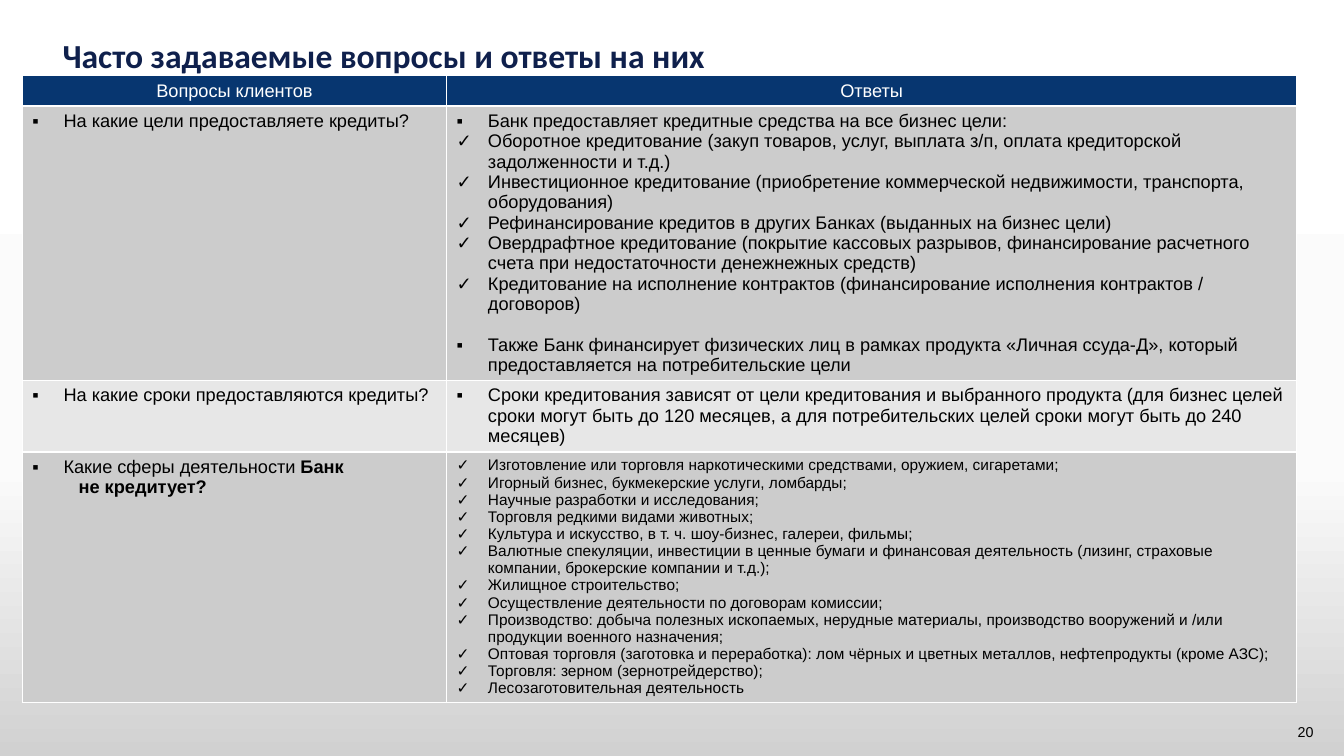
from copy import deepcopy

from lxml.etree import SubElement
from pptx import Presentation
from pptx.dml.color import RGBColor
from pptx.enum.text import MSO_ANCHOR, MSO_AUTO_SIZE, PP_ALIGN
from pptx.oxml.ns import qn
from pptx.util import Inches, Pt

SQUARE, CHECK = "▪", "✓"
NAVY, WHITE, BLACK = "073670", "FFFFFF", "000000"
DARK_ROW, LIGHT_ROW = "CCCCCC", "E7E7E7"
COLUMN_WIDTHS = [4.21, 8.43]
ROW_HEIGHTS = [0.3, 2.71, 0.71, 2.48]

HEADERS = ["Вопросы клиентов", "Ответы"]
QUESTIONS = [
    "На какие цели предоставляете кредиты?",
    "На какие сроки предоставляются кредиты?",
    "Какие сферы деятельности ",
]
PURPOSES = [
    "Оборотное кредитование (закуп товаров, услуг, выплата з/п, оплата кредиторской задолженности и т.д.)",
    "Инвестиционное кредитование (приобретение коммерческой недвижимости, транспорта, оборудования)",
    "Рефинансирование кредитов в других Банках (выданных на бизнес цели)",
    "Овердрафтное кредитование (покрытие кассовых разрывов, финансирование расчетного счета "
    "при недостаточности денежнежных средств)",
    "Кредитование на исполнение контрактов (финансирование исполнения контрактов / договоров)",
]
TERMS = (
    "Сроки кредитования зависят от цели кредитования и выбранного продукта (для бизнес целей "
    "сроки могут быть до 120 месяцев, а для потребительских целей сроки могут быть до 240 месяцев)"
)
EXCLUDED = [
    "Изготовление или торговля наркотическими средствами, оружием, сигаретами;",
    "Игорный бизнес, букмекерские услуги, ломбарды;",
    "Научные разработки и исследования;",
    "Торговля редкими видами животных;",
    "Культура и искусство, в т. ч. шоу-бизнес, галереи, фильмы;",
    "Валютные спекуляции, инвестиции в ценные бумаги и финансовая деятельность "
    "(лизинг, страховые компании, брокерские компании и т.д.);",
    "Жилищное строительство;",
    "Осуществление деятельности по договорам комиссии;",
    "Производство: добыча полезных ископаемых, нерудные материалы, производство вооружений "
    "и /или продукции военного назначения;",
    "Оптовая торговля (заготовка и переработка): лом чёрных и цветных металлов, "
    "нефтепродукты (кроме АЗС);",
    "Торговля: зерном (зернотрейдерство);",
    "Лесозаготовительная деятельность",
]


def color(value):
    return RGBColor.from_string(value)


def set_font(paragraph, size, fill, name="Arial", bold=False):
    font = paragraph.font
    font.name, font.size, font.bold = name, Pt(size), bold
    font.color.rgb = color(fill)


def set_indent(paragraph, left, first_line):
    properties = paragraph._p.get_or_add_pPr()
    properties.set("marL", str(Inches(left)))
    properties.set("indent", str(Inches(first_line)))
    return properties


def clear_margins(text_frame):
    text_frame.margin_left = text_frame.margin_right = 0
    text_frame.margin_top = text_frame.margin_bottom = 0


def add_background(slide):
    fill = slide.background.fill
    fill.gradient()
    fill.gradient_angle = 270
    stop_list = slide.element.xpath(".//a:gsLst")[0]
    stop_list.append(deepcopy(stop_list[0]))
    stops = [(0, "FFFFFF"), (0.62, "FBFBFB"), (1, "D1D1D1")]
    for stop, (position, value) in zip(fill.gradient_stops, stops):
        stop.position = position
        stop.color.rgb = color(value)


def add_title(slide, left, top, width, height):
    title = slide.shapes.title
    title.left, title.top = Inches(left), Inches(top)
    title.width, title.height = Inches(width), Inches(height)
    text_frame = title.text_frame
    text_frame.text = "Часто задаваемые вопросы и ответы на них"
    clear_margins(text_frame)
    text_frame.vertical_anchor = MSO_ANCHOR.TOP
    text_frame.auto_size = MSO_AUTO_SIZE.NONE
    paragraph = text_frame.paragraphs[0]
    paragraph.alignment = PP_ALIGN.LEFT
    set_font(paragraph, 24, "0F204C", "Calibri", True)


def style_cell(cell, fill):
    properties = cell._tc.get_or_add_tcPr()
    for side in "LRTB":
        line = SubElement(properties, qn(f"a:ln{side}"), w=str(Pt(1)))
        solid = SubElement(line, qn("a:solidFill"))
        SubElement(solid, qn("a:srgbClr"), val=WHITE)
    cell.fill.solid()
    cell.fill.fore_color.rgb = color(fill)


def fill_list(cell, items, size=13):
    """Write (bullet, text) items as a list with hanging indents."""
    text_frame = cell.text_frame
    for index, (bullet, text) in enumerate(items):
        paragraph = text_frame.add_paragraph() if index else text_frame.paragraphs[0]
        paragraph.text = text
        properties = set_indent(paragraph, 0.31, -0.31)
        SubElement(properties, qn("a:buFont"), typeface="Arial")
        SubElement(properties, qn("a:buChar"), char=bullet)
        set_font(paragraph, size, BLACK)


def add_questions_table(slide, left, top):
    frame = slide.shapes.add_table(
        len(ROW_HEIGHTS), len(COLUMN_WIDTHS), Inches(left), Inches(top),
        Inches(sum(COLUMN_WIDTHS)), Inches(sum(ROW_HEIGHTS)))
    table = frame.table
    for column, width in zip(table.columns, COLUMN_WIDTHS):
        column.width = Inches(width)
    for row, height in zip(table.rows, ROW_HEIGHTS):
        row.height = Inches(height)

    # Header row
    for cell, text in zip(table.rows[0].cells, HEADERS):
        style_cell(cell, NAVY)
        cell.text = text
        paragraph = cell.text_frame.paragraphs[0]
        paragraph.alignment = PP_ALIGN.CENTER
        set_font(paragraph, 13, WHITE)

    # Questions and answers
    purposes = [(SQUARE, "Банк предоставляет кредитные средства на все бизнес цели:")]
    purposes += [(CHECK, text) for text in PURPOSES]
    purposes.append((SQUARE, "Также Банк финансирует физических лиц в рамках продукта "
                             "«Личная ссуда-Д», который предоставляется на потребительские цели"))
    answers = [(purposes, 13), ([(SQUARE, TERMS)], 13),
               ([(CHECK, text) for text in EXCLUDED], 11)]
    fills = [DARK_ROW, LIGHT_ROW, DARK_ROW]
    for row, (question, (items, size), fill) in enumerate(zip(QUESTIONS, answers, fills), 1):
        question_cell, answer_cell = table.cell(row, 0), table.cell(row, 1)
        style_cell(question_cell, fill)
        style_cell(answer_cell, fill)
        fill_list(question_cell, [(SQUARE, question)])
        fill_list(answer_cell, items, size)

    # Gap before the closing answer on purposes
    table.cell(1, 1).text_frame.paragraphs[-1].space_before = Pt(14.6)

    # Bold end of the last question
    text_frame = table.cell(3, 0).text_frame
    bank = text_frame.paragraphs[0].add_run()
    bank.text = "Банк"
    bank.font.bold = True
    ending = text_frame.add_paragraph()
    ending.text = "не кредитует?"
    set_indent(ending, 0.46, 0)
    set_font(ending, 13, BLACK, bold=True)


def add_page_number(slide, left, top, width, height):
    box = slide.shapes.add_textbox(Inches(left), Inches(top), Inches(width), Inches(height))
    box.text_frame.text = "20"
    box.text_frame.word_wrap = False
    clear_margins(box.text_frame)
    set_font(box.text_frame.paragraphs[0], 10.2, BLACK)


def main():
    presentation = Presentation()
    presentation.slide_width, presentation.slide_height = Inches(13.33), Inches(7.5)
    slide = presentation.slides.add_slide(presentation.slide_layouts[5])
    add_background(slide)
    add_title(slide, 0.62, 0.35, 8.86, 0.53)
    add_questions_table(slide, 0.22, 0.75)
    add_page_number(slide, 12.87, 7.18, 0.29, 0.17)
    presentation.save("out.pptx")


if __name__ == "__main__":
    main()
